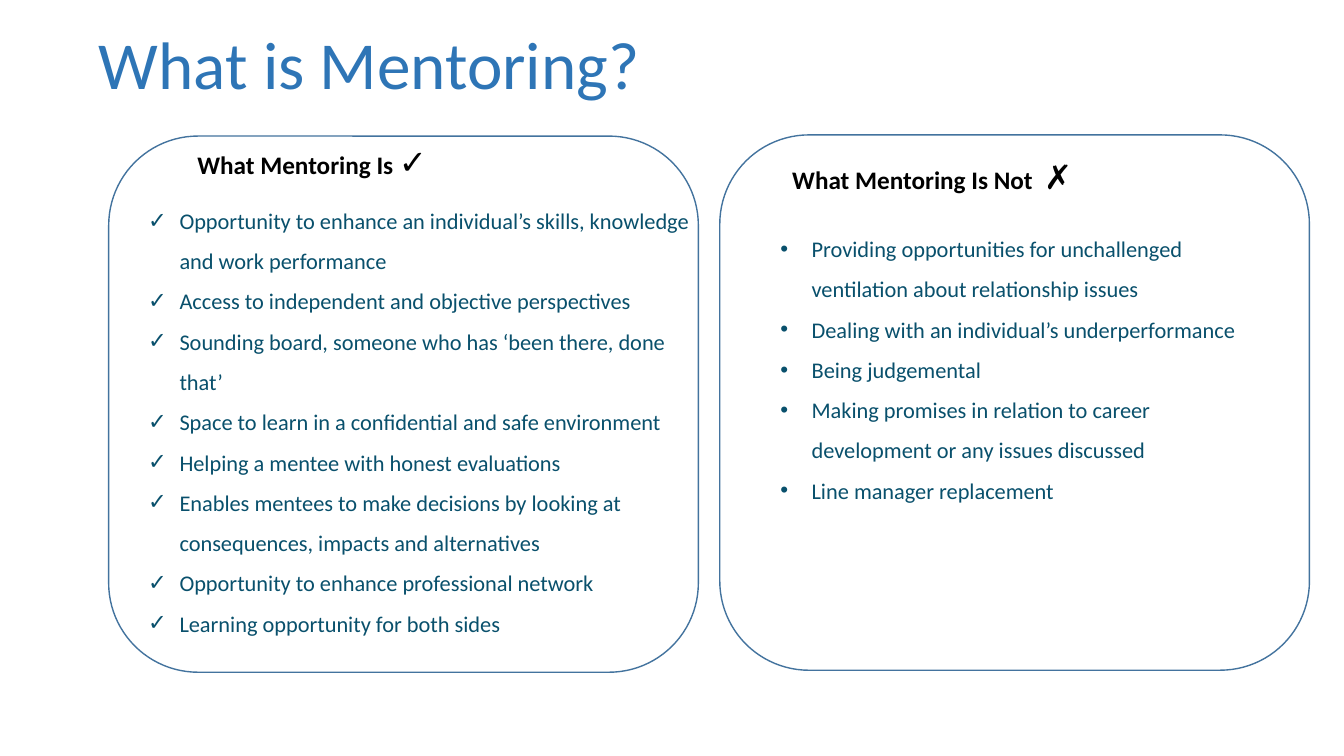
import pptx
import pptx.util
import pptx.dml.color
import pptx.enum.shapes
import pptx.enum.text
import lxml.etree
from pptx.oxml.ns import qn

COLOURS = {"title": "2E75B6", "outline": "43739E", "heading": "000000", "points": "09506C"}
FONT = "Calibri"
TITLE = "What is Mentoring?"
TITLE_FRAME = (2.24, 0.66, 27.94, 4.04)
PANELS = [
    {
        "heading": "What Mentoring Is", "mark": "✓", "mark_font": FONT, "mark_tab": 5.16,
        "bullet": "✓",
        "points": [
            "Opportunity to enhance an individual’s skills, knowledge and work performance",
            "Access to independent and objective perspectives",
            "Sounding board, someone who has ‘been there, done that’",
            "Space to learn in a confidential and safe environment",
            "Helping a mentee with honest evaluations",
            "Enables mentees to make decisions by looking at consequences, impacts and alternatives",
            "Opportunity to enhance professional network",
            "Learning opportunity for both sides",
        ],
        "card_frame": (2.74, 3.43, 14.86, 13.51),
        "heading_frame": (4.72, 3.43, 12.5, 1.27),
        "points_frame": (3.48, 4.75, 14.66, 11.43),
        "placeholders": (1, 2),
    },
    {
        "heading": "What Mentoring Is Not", "mark": "✗", "mark_font": "Noto Sans CJK SC", "mark_tab": 6.6,
        "bullet": "•",
        "points": [
            "Providing opportunities for unchallenged ventilation about relationship issues",
            "Dealing with an individual’s underperformance",
            "Being judgemental",
            "Making promises in relation to career development or any issues discussed",
            "Line manager replacement",
        ],
        "card_frame": (18.14, 3.4, 14.86, 13.49),
        "heading_frame": (19.71, 3.81, 12.5, 1.27),
        "points_frame": (19.41, 5.46, 12.34, 7.34),
        "placeholders": (3, 4),
    },
]
INDENT = pptx.util.Cm(0.79)


def lengths(frame):
    return [pptx.util.Cm(value) for value in frame]


def colour(name):
    return pptx.dml.color.RGBColor.from_string(COLOURS[name])


def prepare(holder, frame):
    holder.left, holder.top, holder.width, holder.height = lengths(frame)
    text = holder.text_frame
    text.word_wrap = True
    text.auto_size = pptx.enum.text.MSO_AUTO_SIZE.NONE
    text.vertical_anchor = pptx.enum.text.MSO_ANCHOR.TOP
    return text


def add_run(paragraph, words, size, tint, bold=False, face=FONT):
    run = paragraph.add_run()
    run.text = words
    run.font.size = pptx.util.Pt(size)
    run.font.bold = bold
    run.font.color.rgb = colour(tint)
    run.font.name = face
    for script in ("a:ea", "a:sym"):
        lxml.etree.SubElement(run.font._element, qn(script), typeface=face)


def add_card(slide, frame):
    card = slide.shapes.add_shape(pptx.enum.shapes.MSO_SHAPE.ROUNDED_RECTANGLE, *lengths(frame))
    card.shadow.inherit = False
    card.fill.background()
    card.line.color.rgb = colour("outline")
    card.line.width = pptx.util.Pt(1)


def write_heading(text, panel):
    paragraph = text.paragraphs[0]
    tabs = lxml.etree.SubElement(paragraph._p.get_or_add_pPr(), qn("a:tabLst"))
    lxml.etree.SubElement(tabs, qn("a:tab"), pos=str(pptx.util.Cm(panel["mark_tab"])), algn="l")
    paragraph.space_before = pptx.util.Pt(0)
    add_run(paragraph, panel["heading"] + "\t", 18, "heading", True)
    add_run(paragraph, panel["mark"], 24, "heading", True, panel["mark_font"])


def write_points(text, panel):
    for number, point in enumerate(panel["points"]):
        paragraph = text.add_paragraph() if number else text.paragraphs[0]
        properties = paragraph._p.get_or_add_pPr()
        properties.set("marL", str(INDENT))
        properties.set("indent", str(-INDENT))
        lxml.etree.SubElement(properties, qn("a:buFont"), typeface="Arial")
        lxml.etree.SubElement(properties, qn("a:buChar"), char=panel["bullet"])
        paragraph.line_spacing = 1.5
        paragraph.space_before = pptx.util.Pt(0)
        add_run(paragraph, point, 16, "points")


def main():
    deck = pptx.Presentation()
    deck.slide_width, deck.slide_height = lengths((33.87, 19.05))
    slide = deck.slides.add_slide(deck.slide_layouts.get_by_name("Comparison"))
    holders = {holder.placeholder_format.idx: holder for holder in slide.placeholders}

    title = prepare(holders[0], TITLE_FRAME).paragraphs[0]
    title.alignment = pptx.enum.text.PP_ALIGN.LEFT
    title.line_spacing = 0.9
    add_run(title, TITLE, 48, "title")

    for panel in PANELS:
        add_card(slide, panel["card_frame"])
        heading, points = (holders[index] for index in panel["placeholders"])
        write_heading(prepare(heading, panel["heading_frame"]), panel)
        write_points(prepare(points, panel["points_frame"]), panel)

    deck.save("out.pptx")


if __name__ == "__main__":
    main()
